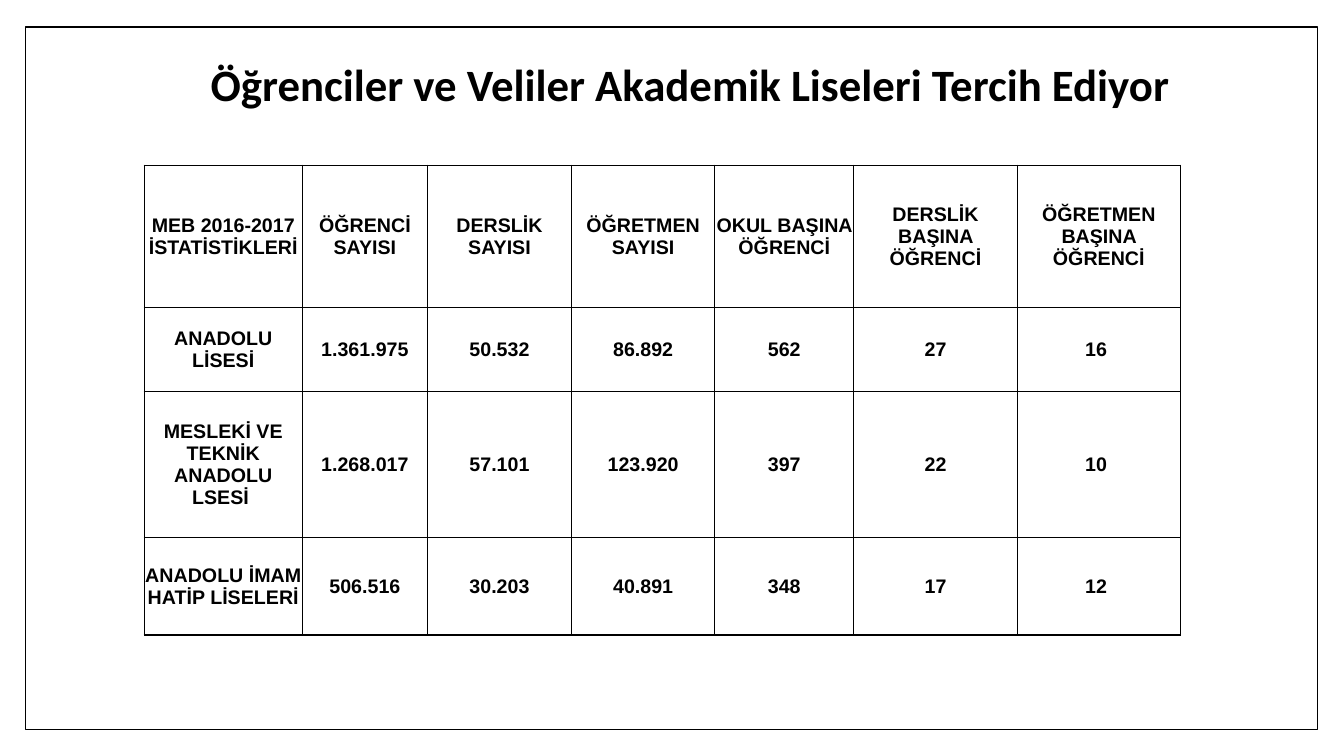
from lxml import etree
from pptx import Presentation
from pptx.dml.color import RGBColor
from pptx.enum.shapes import MSO_SHAPE as Preset
from pptx.enum.text import MSO_ANCHOR as Anchor, PP_ALIGN as Align
from pptx.oxml.ns import qn
from pptx.util import Inches, Pt

COLORS = {"paper": "FFFFFF", "ink": "000000"}
COLUMN_WIDTHS = [1.57, 1.24, 1.43, 1.42, 1.38, 1.62, 1.62]
ROW_HEIGHTS = [1.41, 0.83, 1.45, 0.97]
SCHOOL_STATISTICS = [
    ["MEB 2016-2017 İSTATİSTİKLERİ", "ÖĞRENCİ SAYISI", "DERSLİK SAYISI", "ÖĞRETMEN SAYISI",
     "OKUL BAŞINA ÖĞRENCİ", "DERSLİK BAŞINA ÖĞRENCİ", "ÖĞRETMEN BAŞINA ÖĞRENCİ"],
    ["ANADOLU LİSESİ", "1.361.975", "50.532", "86.892", "562", "27", "16 "],
    ["MESLEKİ VE TEKNİK ANADOLU LSESİ ", "1.268.017", "57.101", "123.920", "397", "22", "10 "],
    ["ANADOLU İMAM HATİP LİSELERİ", "506.516", "30.203", "40.891", "348", "17", "12 "],
]


def rgb(name):
    """Return the palette colour with the given name."""
    return RGBColor.from_string(COLORS[name])


def write_text(frame, text, size=14, font="Arial", bold=True, color="ink",
               align=Align.CENTER, spacing=1.0):
    """Write one formatted paragraph into a text frame."""
    frame.word_wrap = True
    paragraph = frame.paragraphs[0]
    paragraph.alignment = align
    paragraph.line_spacing = spacing
    run = paragraph.add_run()
    run.text = text
    run.font.size = Pt(size)
    run.font.name = font
    run.font.bold = bold
    run.font.color.rgb = rgb(color)


def add_border(cell, color="ink", width=1):
    """Draw a line on all four sides of a table cell."""
    properties = cell._tc.get_or_add_tcPr()
    for index, side in enumerate(("a:lnL", "a:lnR", "a:lnT", "a:lnB")):
        line = etree.Element(qn(side), w=str(Pt(width)))
        fill = etree.SubElement(line, qn("a:solidFill"))
        etree.SubElement(fill, qn("a:srgbClr"), val=COLORS[color])
        properties.insert(index, line)


def add_frame(slide, left, top, width, height):
    """Put the outlined page frame behind everything else."""
    page = slide.shapes.add_shape(Preset.RECTANGLE, Inches(left), Inches(top),
                                  Inches(width), Inches(height))
    page.shadow.inherit = False
    page.fill.solid()
    page.fill.fore_color.rgb = rgb("paper")
    page.line.color.rgb = rgb("ink")
    page.line.width = Pt(1)
    slide.shapes.title.element.addprevious(page.element)


def add_title(slide, text, left, top, width, height):
    """Place and fill the title placeholder."""
    title = slide.shapes.title
    title.left, title.top = Inches(left), Inches(top)
    title.width, title.height = Inches(width), Inches(height)
    title.text_frame.vertical_anchor = Anchor.MIDDLE
    write_text(title.text_frame, text, size=32, font="Calibri", spacing=0.9)


def add_statistics(slide, left, top):
    """Build the bordered table of school statistics."""
    table = slide.shapes.add_table(
        len(ROW_HEIGHTS), len(COLUMN_WIDTHS), Inches(left), Inches(top),
        Inches(sum(COLUMN_WIDTHS)), Inches(sum(ROW_HEIGHTS))).table
    table.first_row = table.horz_banding = False
    for column, width in zip(table.columns, COLUMN_WIDTHS):
        column.width = Inches(width)
    for row, height, entries in zip(table.rows, ROW_HEIGHTS, SCHOOL_STATISTICS):
        row.height = Inches(height)
        for cell, entry in zip(row.cells, entries):
            cell.margin_left = cell.margin_right = cell.margin_top = Inches(0.01)
            cell.margin_bottom = 0
            cell.vertical_anchor = Anchor.MIDDLE
            cell.fill.background()
            add_border(cell)
            write_text(cell.text_frame, entry)


def main():
    """Build and save the slide."""
    deck = Presentation()
    deck.slide_width, deck.slide_height = Inches(13.33), Inches(7.5)
    slide = deck.slides.add_slide(deck.slide_layouts[5])
    add_frame(slide, 0.25, 0.27, 12.82, 6.97)
    add_title(slide, "Öğrenciler ve Veliler Akademik Liseleri Tercih Ediyor",
              0.9, 0.4, 11.9, 0.92)
    add_statistics(slide, 1.43, 1.64)
    deck.save("out.pptx")


if __name__ == "__main__":
    main()
